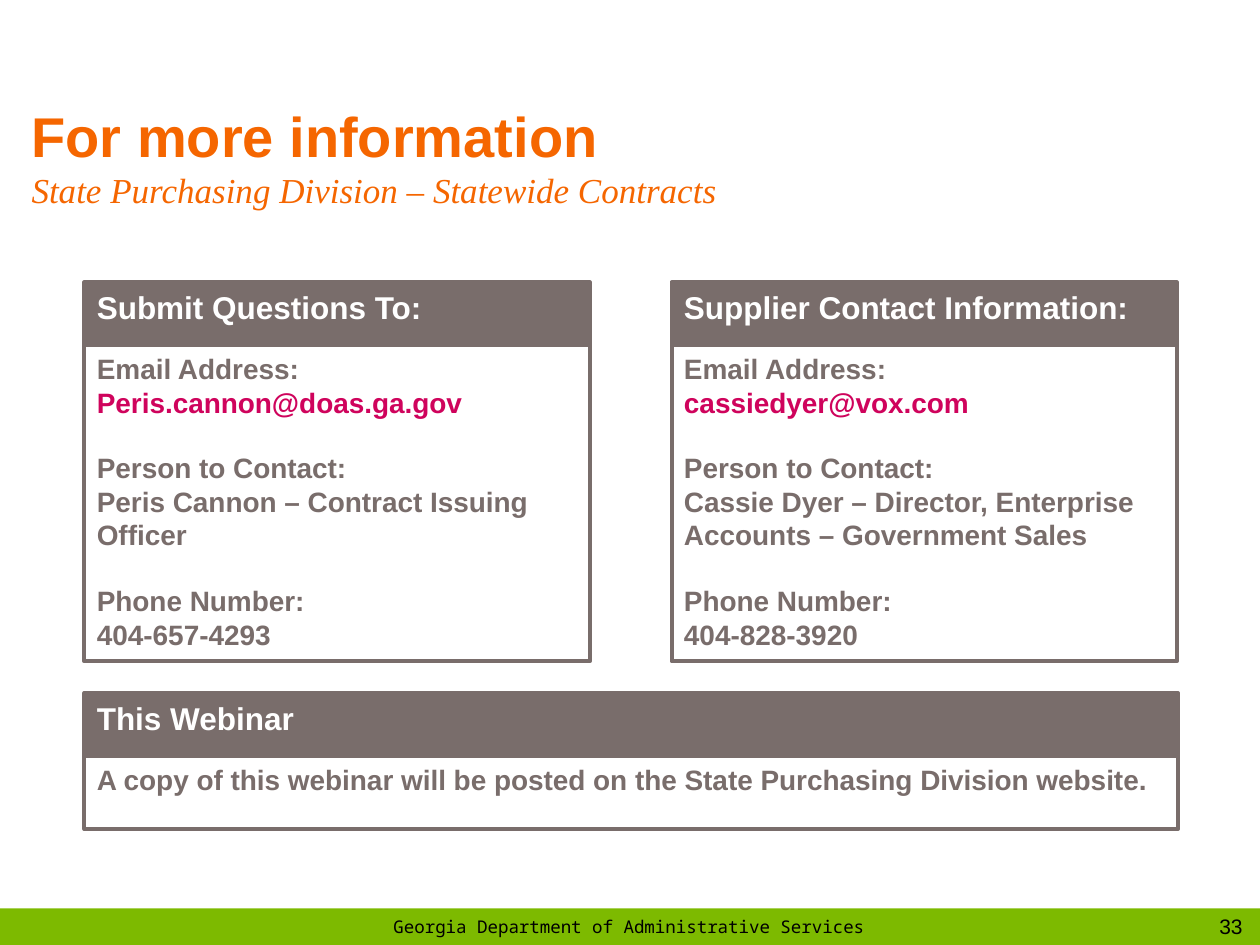
from pptx import Presentation, util as u
from pptx.dml.color import RGBColor
from pptx.enum import shapes, text

GREEN = RGBColor(0x7D, 0xBA, 0x00)
ORANGE = RGBColor(0xF5, 0x66, 0x00)
GREY = RGBColor(0x79, 0x6D, 0x6B)
PINK = RGBColor(0xCF, 0x03, 0x5C)
WHITE = RGBColor(0xFF, 0xFF, 0xFF)
BLACK = RGBColor(0, 0, 0)

TITLE = "For more information"
SUB = "State Purchasing Division – Statewide Contracts"
OWNER = "Georgia Department of Administrative Services"
PAGE = "33"


def contact(mail, person, phone):
    return [
        [("Email Address:", GREY), (mail, PINK)],
        [("Person to Contact:", GREY), (person, GREY)],
        [("Phone Number:", GREY), (phone, GREY)],
    ]


LEFT, RIGHT, WIDE, HALF = 0.67, 5.33, 8.68, 4.01
HEAD = 0.5
PANELS = [
    ("Submit Questions To:", (LEFT, 2.24, HALF, 2.51),
     contact("Peris.cannon@doas.ga.gov",
             "Peris Cannon – Contract Issuing Officer", "404-657-4293")),
    ("Supplier Contact Information:", (RIGHT, 2.24, HALF, 2.51),
     contact("cassiedyer@vox.com",
             "Cassie Dyer – Director, Enterprise Accounts – Government Sales",
             "404-828-3920")),
    ("This Webinar", (LEFT, 5.5, WIDE, 0.58),
     [[("A copy of this webinar will be posted on the "
        "State Purchasing Division website.", GREY)]]),
]

HEADING = dict(name="Arial", size=u.Pt(18), bold=True)
BODY = dict(name="Arial", size=u.Pt(16), bold=True)
MAIN = dict(name="Arial", size=u.Pt(32), bold=True, italic=False)
MINOR = dict(name="Times New Roman", size=u.Pt(20), bold=False, italic=True)
NUMBER = dict(name="Arial", size=u.Pt(12))
FOOTER = dict(name="Noto Sans Mono", size=u.Pt(10))
GAP = u.Pt(18.4)


def style(font, look, color):
    for key, value in look.items():
        setattr(font, key, value)
    font.color.rgb = color


def place(*box):
    return [u.Inches(v) for v in box]


def block(slide, box, fill, line=None):
    shape = slide.shapes.add_shape(shapes.MSO_SHAPE.RECTANGLE, *place(*box))
    shape.shadow.inherit = False
    shape.fill.solid()
    shape.fill.fore_color.rgb = fill
    if line is None:
        shape.line.fill.background()
    else:
        shape.line.color.rgb = line
        shape.line.width = u.Pt(2.25)
    return shape


def write(shape, groups, look, align=text.PP_ALIGN.LEFT):
    frame = shape.text_frame
    frame.word_wrap = True
    frame.vertical_anchor = text.MSO_ANCHOR.TOP
    for g, group in enumerate(groups):
        for n, (words, color) in enumerate(group):
            first = g == n == 0
            para = frame.paragraphs[0] if first else frame.add_paragraph()
            para.alignment = align
            if g and not n:
                para.space_before = GAP
            run = para.add_run()
            run.text = words
            style(run.font, look, color)


def heading(slide):
    title = slide.shapes.title
    title.left, title.top, title.width, title.height = place(0.15, 0.74, 8.42, 1)
    frame = title.text_frame
    frame.word_wrap = True
    frame.auto_size = text.MSO_AUTO_SIZE.NONE
    frame.vertical_anchor = text.MSO_ANCHOR.MIDDLE
    para = frame.paragraphs[0]
    para.alignment = text.PP_ALIGN.LEFT
    for words, look in [(TITLE, MAIN), (SUB, MINOR)]:
        if para.runs:
            para.add_line_break()
        run = para.add_run()
        run.text = words
        style(run.font, look, ORANGE)


def footer(slide):
    block(slide, (0, 7.21, 10, 0.29), GREEN)
    for words, box, look in [(PAGE, (9.54, 7.2, 0.46, 0.3), NUMBER),
                             (OWNER, (2.99, 7.22, 4, 0.28), FOOTER)]:
        area = slide.shapes.add_textbox(*place(*box))
        write(area, [[(words, BLACK)]], look, text.PP_ALIGN.CENTER)


def main():
    deck = Presentation()
    deck.slide_width, deck.slide_height = place(10, 7.5)
    slide = deck.slides.add_slide(deck.slide_layouts[5])
    footer(slide)
    heading(slide)
    for name, (x, y, w, h), groups in PANELS:
        top = block(slide, (x, y, w, HEAD), GREY, GREY)
        write(top, [[(name, WHITE)]], HEADING)
        body = block(slide, (x, y + HEAD, w, h), WHITE, GREY)
        write(body, groups, BODY)
    deck.save("out.pptx")


if __name__ == "__main__":
    main()
